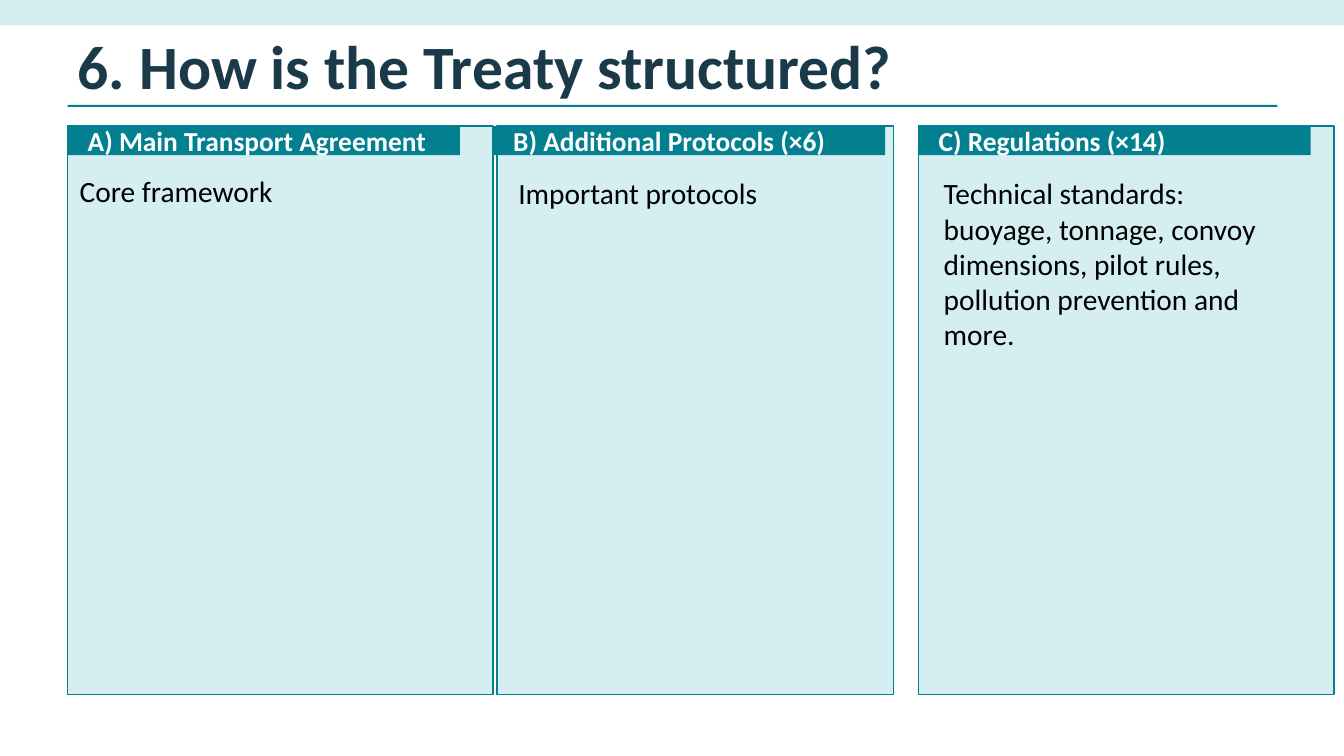
from pptx import Presentation
from pptx.dml.color import RGBColor
from pptx.enum.shapes import MSO_SHAPE
from pptx.enum.text import MSO_ANCHOR, MSO_AUTO_SIZE, PP_ALIGN
from pptx.util import Inches, Pt

FONT = "Calibri"
NAVY, TEAL, PALE, WHITE, BLACK = "1A3A4A", "028090", "D4EEF2", "FFFFFF", "000000"
MARGIN, CONTENT_WIDTH = 0.67, 12
PANEL_TOP, PANEL_HEIGHT = 1.25, 5.64
HEADER_WIDTH, HEADER_HEIGHT = 3.89, 0.29


def color(value):
    return RGBColor.from_string(value)


def add_block(page, left, top, width, height, fill, outline=None):
    block = page.shapes.add_shape(
        MSO_SHAPE.RECTANGLE, Inches(left), Inches(top), Inches(width), Inches(height))
    block.shadow.inherit = False
    block.fill.solid()
    block.fill.fore_color.rgb = color(fill)
    if outline:
        block.line.color.rgb = color(outline)
        block.line.width = Pt(1)
    else:
        block.line.fill.background()
    return block


def write(box, text, size, ink, bold, anchor, inset_x, inset_y):
    frame = box.text_frame
    frame.word_wrap = True
    frame.auto_size = MSO_AUTO_SIZE.NONE
    frame.vertical_anchor = anchor
    frame.margin_left = frame.margin_right = Inches(inset_x)
    frame.margin_top = frame.margin_bottom = Inches(inset_y)
    para = frame.paragraphs[0]
    para.alignment = PP_ALIGN.LEFT
    span = para.add_run()
    span.text = text
    span.font.name = FONT
    span.font.size = Pt(size)
    span.font.bold = bold
    span.font.color.rgb = color(ink)


def add_heading(page, left, top, width, height, text):
    title = page.shapes.title
    title.left, title.top = Inches(left), Inches(top)
    title.width, title.height = Inches(width), Inches(height)
    write(title, text, 44, NAVY, True, MSO_ANCHOR.MIDDLE, 0.1, 0.05)
    add_block(page, left, top + 0.73, width, 0.02, TEAL)


def add_panel(page, left, top, width, height, header_left, body_left, body_top,
              body_height, header, body):
    add_block(page, left, top, width, height, PALE, TEAL)
    header_bar = add_block(page, header_left, top, HEADER_WIDTH, HEADER_HEIGHT, TEAL)
    write(header_bar, header, 19.6, WHITE, True, MSO_ANCHOR.MIDDLE, 0.2, 0.1)
    box = page.shapes.add_textbox(
        Inches(body_left), Inches(body_top), Inches(HEADER_WIDTH), Inches(body_height))
    write(box, body, 21, BLACK, False, MSO_ANCHOR.TOP, 0.25, 0.2)


def build_treaty_slide(deck):
    page = deck.slides.add_slide(deck.slide_layouts[5])
    add_block(page, 0, 0, 13.33, 0.25, PALE)
    add_heading(page, MARGIN, 0.31, CONTENT_WIDTH, 0.67, "6. How is the Treaty structured?")
    panels = [
        (0.67, 4.22, 0.67, 0.54, 1.52, 2.03,
         "A) Main Transport Agreement", "Core framework"),
        (4.93, 3.93, 4.89, 4.89, 1.54, 1.71,
         "B) Additional Protocols (×6)", "Important protocols"),
        (9.11, 4.12, 9.11, 9.11, 1.54, 1.71,
         "C) Regulations (×14)",
         "Technical standards: buoyage, tonnage, convoy dimensions, "
         "pilot rules, pollution prevention and more."),
    ]
    for left, width, *details in panels:
        add_panel(page, left, PANEL_TOP, width, PANEL_HEIGHT, *details)


def main():
    deck = Presentation()
    deck.slide_width, deck.slide_height = Inches(13.33), Inches(7.5)
    build_treaty_slide(deck)
    deck.save("out.pptx")


if __name__ == "__main__":
    main()
